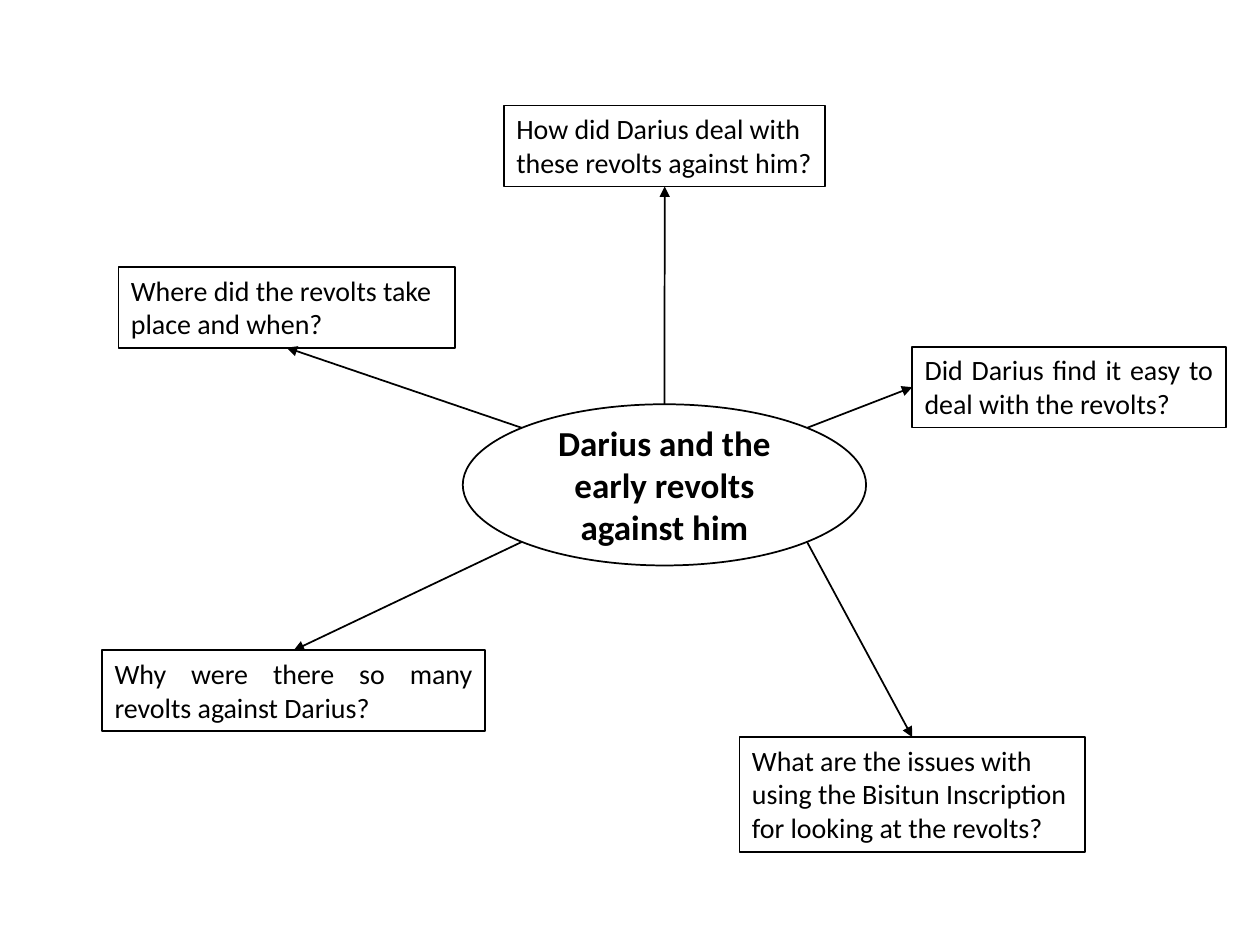
import math

import pptx
import pptx.dml.color
import pptx.enum.shapes
import pptx.enum.text
import pptx.oxml
import pptx.oxml.ns
import pptx.util

Cm = pptx.util.Cm
Pt = pptx.util.Pt
SHAPE = pptx.enum.shapes.MSO_SHAPE
ALIGN = pptx.enum.text.PP_ALIGN
ANCHOR = pptx.enum.text.MSO_ANCHOR
COLORS = {"paper": "FFFFFF", "ink": "000000"}
TOP, LEFT, BOTTOM = 0, 1, 2


def rgb(name):
    return pptx.dml.color.RGBColor.from_string(COLORS[name])


def write(tf, text, size=16, bold=False, align=ALIGN.LEFT, color="ink", font="Calibri"):
    p = tf.paragraphs[0]
    p.alignment = align
    r = p.add_run()
    r.text = text
    r.font.name = font
    r.font.size = Pt(size)
    r.font.bold = bold
    r.font.color.rgb = rgb(color)


class MindMap:
    line_width = Pt(1)

    def __init__(self, slide):
        self.slide = slide

    def outline(self, sp):
        sp.line.color.rgb = rgb("ink")
        sp.line.width = self.line_width

    def node(self, kind, box, text, anchor=ANCHOR.TOP, grow=False, **style):
        sp = self.slide.shapes.add_shape(kind, *(Cm(v) for v in box))
        sp.shadow.inherit = False
        sp.fill.solid()
        sp.fill.fore_color.rgb = rgb("paper")
        self.outline(sp)
        tf = sp.text_frame
        tf.word_wrap = True
        tf.vertical_anchor = anchor
        if grow:
            tf.auto_size = pptx.enum.text.MSO_AUTO_SIZE.SHAPE_TO_FIT_TEXT
        write(tf, text, **style)
        return sp

    def topic(self, box, text):
        return self.node(SHAPE.OVAL, box, text, anchor=ANCHOR.MIDDLE,
                         size=20, bold=True, align=ALIGN.CENTER)

    def question(self, box, text, align):
        return self.node(SHAPE.RECTANGLE, box, text, grow=True, align=align)

    def arrow(self, oval, direction, target, side):
        dx, dy = direction
        reach = math.hypot(dx, dy)
        x = oval.left + oval.width / 2 * (1 + dx / reach)
        y = oval.top + oval.height / 2 * (1 + dy / reach)
        cx = self.slide.shapes.add_connector(
            pptx.enum.shapes.MSO_CONNECTOR.STRAIGHT, int(x), int(y), int(x), int(y))
        if direction == (0, -1):
            cx.begin_connect(oval, TOP)
        cx.end_connect(target, side)
        self.outline(cx)
        ln = cx.line._get_or_add_ln()
        tail = pptx.oxml.parse_xml(
            '<a:tailEnd %s type="triangle"/>' % pptx.oxml.ns.nsdecls("a"))
        ln.append(tail)
        cx._element.spPr.append(
            pptx.oxml.parse_xml("<a:effectLst %s/>" % pptx.oxml.ns.nsdecls("a")))


QUESTIONS = [
    ((2.39, 5.38, 6.78, 1.63), "Where did the revolts take place and when?",
     ALIGN.LEFT, (-1, -1), BOTTOM),
    ((10.16, 2.13, 6.48, 1.63), "How did Darius deal with these revolts against him?",
     ALIGN.LEFT, (0, -1), BOTTOM),
    ((18.39, 6.99, 6.32, 1.63), "Did Darius find it easy to deal with the revolts?",
     ALIGN.JUSTIFY, (1, -1), LEFT),
    ((2.06, 13.11, 7.72, 1.63), "Why were there so many revolts against Darius?",
     ALIGN.JUSTIFY, (-1, 1), TOP),
    ((14.91, 14.86, 6.96, 2.31),
     "What are the issues with using the Bisitun Inscription for looking at the revolts?",
     ALIGN.LEFT, (1, 1), TOP),
]


def main():
    prs = pptx.Presentation()
    prs.slide_width = Cm(25.4)
    prs.slide_height = Cm(19.05)
    s = prs.slides.add_slide(prs.slide_layouts[6])
    s.background.fill.solid()
    s.background.fill.fore_color.rgb = rgb("paper")
    mind_map = MindMap(s)
    oval = mind_map.topic((9.33, 8.15, 8.13, 3.25),
                          "Darius and the early revolts against him")
    for box, text, align, direction, side in QUESTIONS:
        sp = mind_map.question(box, text, align)
        mind_map.arrow(oval, direction, sp, side)
    prs.save("out.pptx")


if __name__ == "__main__":
    main()
